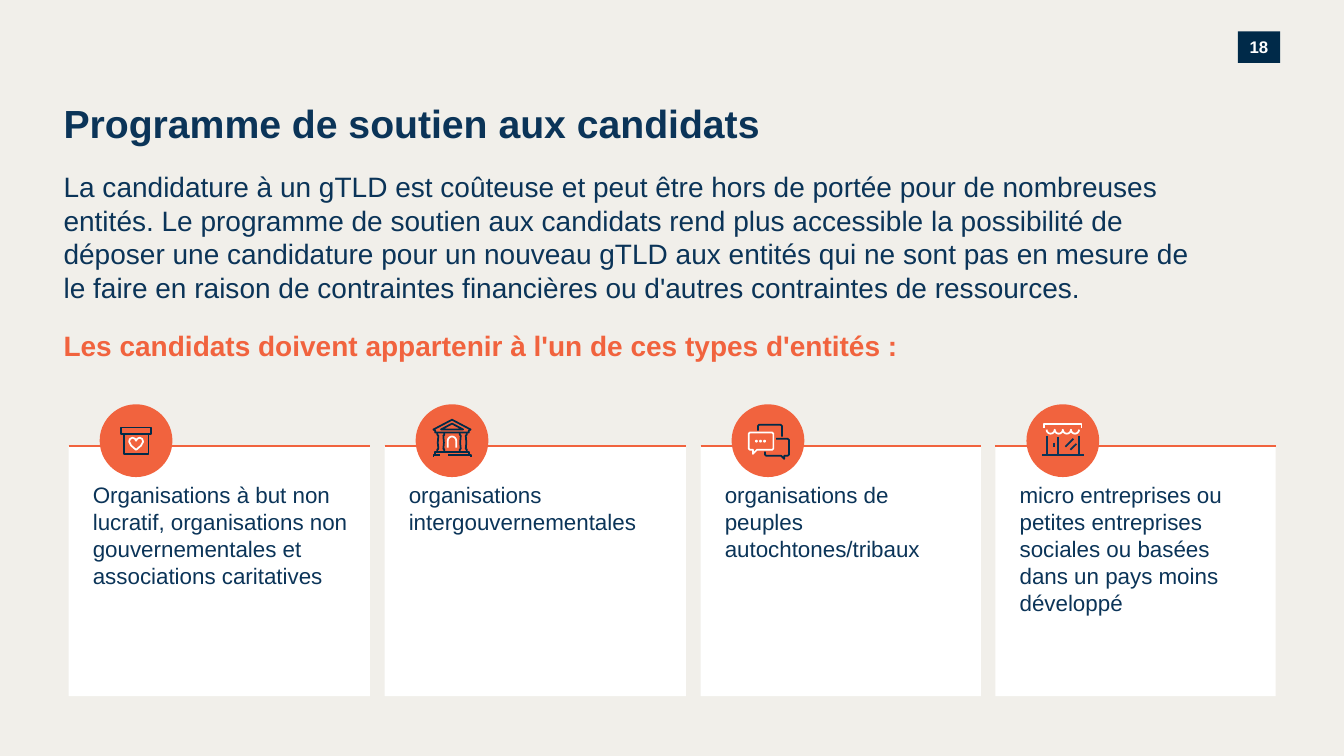
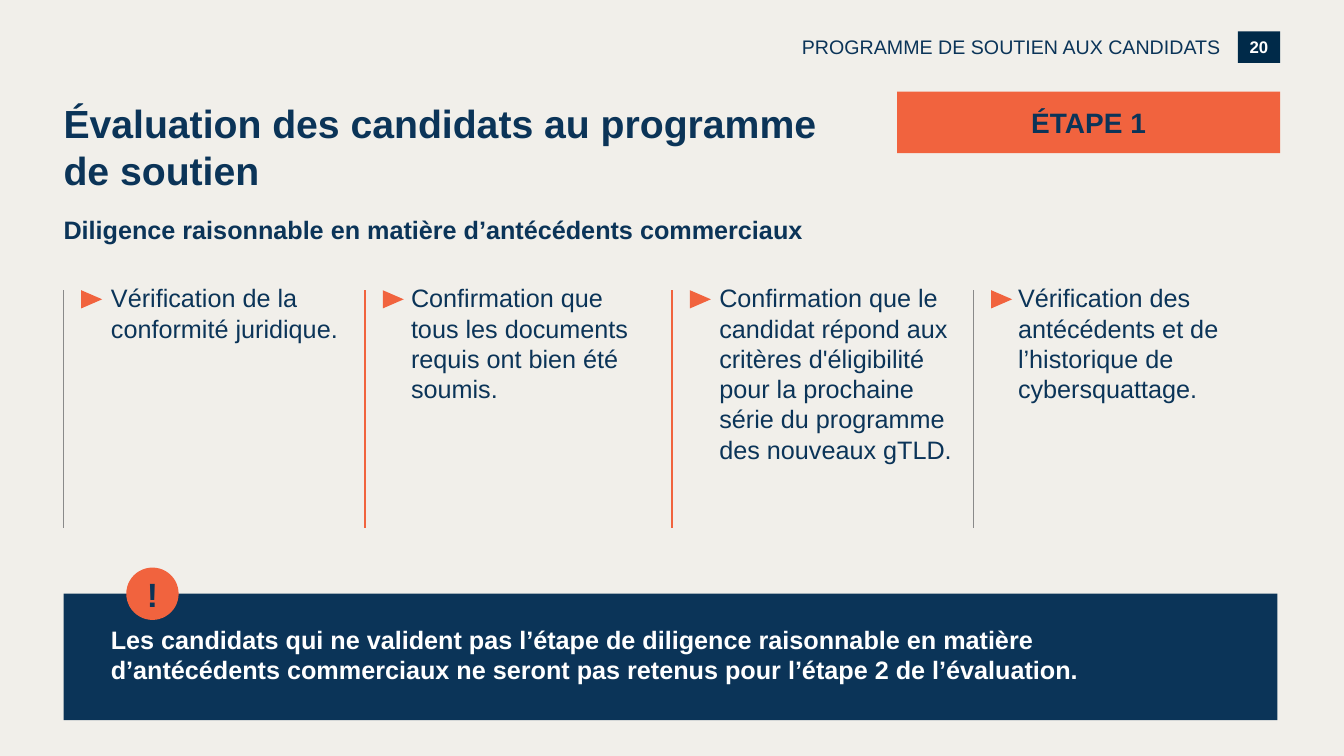
from math import cos, pi, sin

from lxml.etree import SubElement
from pptx import Presentation
from pptx.dml.color import RGBColor
from pptx.enum.shapes import MSO_CONNECTOR, MSO_SHAPE
from pptx.enum.text import MSO_ANCHOR, PP_ALIGN
from pptx.oxml.ns import qn
from pptx.util import Pt

COLORS = {
    "paper": "F1EFEA",
    "navy": "0B3458",
    "ink": "002B49",
    "badge": "002A49",
    "orange": "F1633E",
    "white": "FFFFFF",
    "grey": "8A8A8A",
}
FONT = "Arial"
LEFT = 45.4
CIRCLE = 52


def rgb(name):
    return RGBColor.from_string(COLORS[name])


def write(shape, text, size=18, color="navy", bold=False, align=PP_ALIGN.LEFT,
          anchor=MSO_ANCHOR.TOP, insets=(0, 0, 0, 0)):
    """Put one formatted paragraph in a shape; insets are left, top, right, bottom."""
    frame = shape.text_frame
    frame.word_wrap = True
    frame.vertical_anchor = anchor
    (frame.margin_left, frame.margin_top,
     frame.margin_right, frame.margin_bottom) = map(Pt, insets)
    paragraph = frame.paragraphs[0]
    paragraph.alignment = align
    run = paragraph.add_run()
    run.text = text
    run.font.name, run.font.size, run.font.bold = FONT, Pt(size), bold
    run.font.color.rgb = rgb(color)


class Deck:
    """Holds the shared style and the slide being built."""

    def __init__(self):
        self.prs = Presentation()
        self.prs.slide_width, self.prs.slide_height = Pt(960), Pt(540)
        self.slide = None

    def start(self, number, title):
        self.slide = self.prs.slides.add_slide(self.prs.slide_layouts[6])
        self.slide.background.fill.solid()
        self.slide.background.fill.fore_color.rgb = rgb("paper")
        self.label(884.2, 22.5, 30.2, 22.5, "badge", str(number), size=12, color="white")
        self.text(LEFT, 70.6, 564.5, 39.6, title, size=28, bold=True)

    def text(self, x, y, width, height, words, **style):
        box = self.slide.shapes.add_textbox(Pt(x), Pt(y), Pt(width), Pt(height))
        write(box, words, **style)

    def shape(self, kind, x, y, width, height, fill, group=None):
        shapes = (group or self.slide).shapes
        shape = shapes.add_shape(kind, Pt(x), Pt(y), Pt(width), Pt(height))
        shape.shadow.inherit = False
        shape.fill.solid()
        shape.fill.fore_color.rgb = rgb(fill)
        shape.line.fill.background()
        return shape

    def label(self, x, y, width, height, fill, words, kind=MSO_SHAPE.RECTANGLE, **style):
        shape = self.shape(kind, x, y, width, height, fill)
        write(shape, words, bold=True, align=PP_ALIGN.CENTER,
              anchor=MSO_ANCHOR.MIDDLE, **style)

    def panel(self, x, y, width, height, fill, words, **style):
        write(self.shape(MSO_SHAPE.RECTANGLE, x, y, width, height, fill), words, **style)

    def line(self, x1, y1, x2, y2, color="orange", weight=1.25, group=None):
        shapes = (group or self.slide).shapes
        line = shapes.add_connector(MSO_CONNECTOR.STRAIGHT, Pt(x1), Pt(y1), Pt(x2), Pt(y2))
        SubElement(line._element.spPr, qn("a:effectLst"))
        line.line.color.rgb = rgb(color)
        line.line.width = Pt(weight)

    def stroke(self, group, points, color, closed):
        if len(points) == 2:
            self.line(*points[0], *points[1], color=color, group=group)
            return
        start, *rest = [(Pt(x), Pt(y)) for x, y in points]
        builder = group.shapes.build_freeform(*start, scale=1.0)
        builder.add_line_segments(rest, close=closed)
        outline = builder.convert_to_shape()
        outline.shadow.inherit = False
        outline.fill.background()
        outline.line.color.rgb = rgb(color)
        outline.line.width = Pt(1.25)

    def icon(self, x, y, strokes, dots=()):
        """Draw a disc, then strokes and dots measured from its centre."""
        group = self.slide.shapes.add_group_shape()
        self.shape(MSO_SHAPE.OVAL, x, y, CIRCLE, CIRCLE, "orange", group)
        cx, cy = x + CIRCLE / 2, y + CIRCLE / 2
        for color, closed, points in strokes:
            self.stroke(group, [(cx + px, cy + py) for px, py in points], color, closed)
        for px, py in dots:
            self.shape(MSO_SHAPE.OVAL, cx + px - 1, cy + py - 1, 2, 2, "white", group)


# Icon outlines: colour, closed, points from the disc centre
def box(left, top, right, bottom):
    return [(left, top), (right, top), (right, bottom), (left, bottom)]


def charity_icon():
    half = [(0, 6.5), (3.5, 3.5), (5, 0.7), (4.4, -1.2), (2.6, -2.2), (0.8, -1.4), (0, 0)]
    heart = half + [(-x, y) for x, y in half[-2:0:-1]]
    return [
        ("ink", True, box(-10.8, -9.4, 10.8, -5)),
        ("ink", True, box(-8.8, -5, 8.8, 9.4)),
        ("white", True, heart),
    ]


def institution_icon():
    profile = [(2.5, 8), (2.5, 6.2), (1.8, 5.8), (2.2, 1.4), (1.8, -3.6), (2.5, -4.3), (2.5, -5.8)]
    columns = [("ink", False, [(centre + side * x, y) for x, y in profile])
               for centre in (-8, 8) for side in (-1, 1)]
    arch = [(-3 * cos(a * pi / 8), -3 * sin(a * pi / 8)) for a in range(9)]
    return columns + [
        ("ink", True, [(12, -5.8), (-12, -5.8), (-12, -7.2), (-13.3, -8),
                       (0, -15), (13.3, -8), (12, -7.2)]),
        ("ink", True, [(0, -12.2), (-7.9, -8), (7.9, -8)]),
        ("ink", False, [(-12, 10), (-12, 8), (12, 8), (12, 10)]),
        ("ink", False, [(-13.3, 11.5), (-13.3, 10), (-8.3, 10)]),
        ("ink", False, [(-3, 10), (13.3, 10), (13.3, 11.5)]),
        ("white", False, [(-3, 5), *arch, (3, 5)]),
    ]


def dialogue_icon():
    return [
        ("white", True, [(-13, -5.8), (3, -5.8), (3.8, -5), (3.8, 5.7), (3, 6.5), (-7.9, 6.5),
                         (-10.8, 9.4), (-10.8, 6.5), (-13, 6.5), (-13.8, 5.7), (-13.8, -5)]),
        ("ink", False, [(-2.2, 7.9), (-2.2, 9.9), (-1.3, 10.8), (9.4, 10.8), (11.5, 13),
                        (11.5, 10.8), (14, 10.8), (15, 9.9), (15, -0.5), (14, -1.4), (5.8, -1.4)]),
        ("ink", False, [(-7.2, -7.2), (-7.2, -10.5), (-6.2, -11.5), (9, -11.5),
                        (10, -10.5), (10, -2.9)]),
    ]


def shop_icon():
    scallops = [(-11.6 + 5.8 * n + 2.9 * (1 - cos(a * pi / 8)), -7.9 + 2.9 * sin(a * pi / 8))
                for n in range(4) for a in range(9)]
    straight = [
        [(-11.5, -3.6), (-11.5, 10)],
        [(-3.6, -2.9), (-3.6, 10)],
        [(11.5, -3.6), (11.5, 10)],
        [(-6.1, 1.4), (-6.1, 4.3)],
        [(-14.8, 10), (14.8, 10)],
        [(7.5, -1.4), (1.8, 4.3)],
        [(9.7, 2.2), (5.4, 6.5)],
    ]
    return [("navy", False, points) for points in straight] + [
        ("white", False, scallops),
        ("white", False, [(-13.3, -9.4), (-13.3, -12.2), (13.3, -12.2), (13.3, -9.4)]),
    ]


def support_slide(deck):
    deck.start(18, "Programme de soutien aux candidats")
    deck.text(LEFT, 121, 818, 107.3,
              "La candidature à un gTLD est coûteuse et peut être hors de portée pour de "
              "nombreuses entités. Le programme de soutien aux candidats rend plus accessible "
              "la possibilité de déposer une candidature pour un nouveau gTLD aux entités qui "
              "ne sont pas en mesure de le faire en raison de contraintes financières ou "
              "d'autres contraintes de ressources.", size=20)
    deck.text(LEFT, 234.7, 746.6, 31,
              "Les candidats doivent appartenir à l'un de ces types d'entités :",
              size=20, color="orange", bold=True)

    # Entity cards
    entities = [
        (215.3, "Organisations à but non lucratif, organisations non gouvernementales "
                "et associations caritatives", charity_icon(), ()),
        (215.3, "organisations intergouvernementales", institution_icon(), ()),
        (200.2, "organisations de peuples autochtones/tribaux", dialogue_icon(),
         [(x, 0.3) for x in (-8.3, -5.4, -2.5)]),
        (200.2, "micro entreprises ou petites entreprises sociales ou basées dans un pays "
                "moins développé", shop_icon(), ()),
    ]
    x, top = 49, 318.7
    for width, entity, strokes, dots in entities:
        deck.panel(x, top, width, 178.6, "white", entity, size=16,
                   insets=(17.3, 25.2, 11.5, 14.4))
        deck.line(x, top, x + width, top)
        deck.icon(x + 22.2, 288.8, strokes, dots)
        x += width + 10.4


def evaluation_slide(deck):
    deck.start(20, "Évaluation des candidats au programme de soutien")
    deck.text(524.2, 25.2, 347.8, 17.3, "PROGRAMME DE SOUTIEN AUX CANDIDATS",
              size=14, align=PP_ALIGN.RIGHT)
    deck.label(640.8, 65.4, 273.6, 44, "orange", "ÉTAPE 1", size=20)
    deck.text(LEFT, 153.4, 564.5, 29.5,
              "Diligence raisonnable en matière d’antécédents commerciaux", bold=True)

    # Checks: rule position, text position, text width
    thin, strong = ("grey", 0.5), ("orange", 1.25)
    checks = [
        (LEFT, 79.3, 163, thin, "Vérification de la conformité juridique."),
        (260.8, 293.6, 168.5, strong,
         "Confirmation que tous les documents requis ont bien été soumis."),
        (480.2, 513.8, 168.5, strong,
         "Confirmation que le candidat répond aux critères d'éligibilité pour la prochaine "
         "série du programme des nouveaux gTLD."),
        (695.4, 727.2, 185, thin,
         "Vérification des antécédents et de l’historique de cybersquattage."),
    ]
    for rule_x, text_x, width, (color, weight), check in checks:
        deck.line(rule_x, 207.4, rule_x, 377, color, weight)
        marker = deck.shape(MSO_SHAPE.ISOSCELES_TRIANGLE, rule_x + 13.6, 206.3, 13, 15, "orange")
        marker.rotation = 90
        deck.text(text_x, 201.9, width, 180, check)

    # Warning
    deck.panel(LEFT, 424.1, 867, 90.4, "navy",
               "Les candidats qui ne valident pas l’étape de diligence raisonnable en matière "
               "d’antécédents commerciaux ne seront pas retenus pour l’étape 2 de l’évaluation.",
               color="white", bold=True, insets=(33.8, 21.6, 48.2, 21.6))
    deck.label(90.2, 405.4, 37.4, 37.4, "orange", "!", kind=MSO_SHAPE.OVAL, size=24)


def main():
    deck = Deck()
    support_slide(deck)
    evaluation_slide(deck)
    deck.prs.save("out.pptx")


if __name__ == "__main__":
    main()
